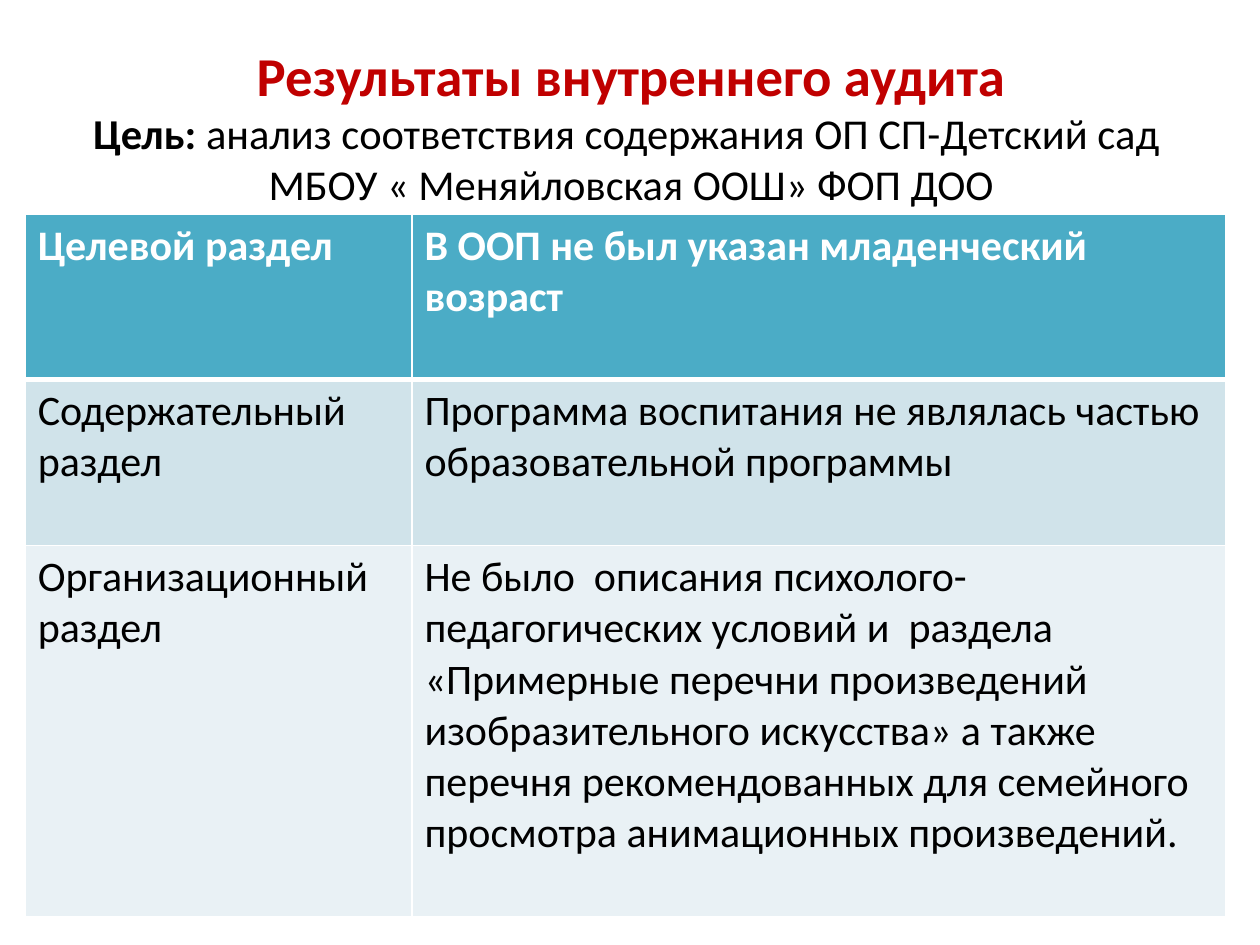
from lxml.etree import SubElement
from pptx import Presentation
from pptx.dml.color import RGBColor
from pptx.enum.text import MSO_ANCHOR, PP_ALIGN
from pptx.oxml.ns import qn
from pptx.util import Inches, Pt

FONT = "Calibri"
WHITE = "FFFFFF"
BLACK = "000000"
COLUMNS = [3.07, 6.46]
HEIGHTS = [1.31, 1.32, 2.95]
FILLS = ["4BACC6", "D0E3EA", "E9F1F5"]
SECTIONS = [
    ("Целевой раздел", "В ООП не был указан младенческий возраст"),
    ("Содержательный раздел",
     "Программа воспитания не являлась частью образовательной программы"),
    ("Организационный раздел",
     "Не было  описания психолого-педагогических условий и  раздела "
     "«Примерные перечни произведений изобразительного искусства» а также "
     "перечня рекомендованных для семейного просмотра анимационных произведений."),
]


def color(value):
    return RGBColor.from_string(value)


def add_span(para, text, size, tint, bold=False):
    span = para.add_run()
    span.text = text
    span.font.name = FONT
    span.font.size = Pt(size)
    span.font.bold = bold
    span.font.color.rgb = color(tint)


def add_heading(page, left, top, width, height):
    box = page.shapes.add_textbox(Inches(left), Inches(top), Inches(width), Inches(height))
    frame = box.text_frame
    frame.word_wrap = True
    frame.vertical_anchor = MSO_ANCHOR.TOP
    frame.margin_top = Inches(0.12)
    frame.margin_left = frame.margin_right = Inches(0.05)
    title = frame.paragraphs[0]
    goal = frame.add_paragraph()
    title.alignment = goal.alignment = PP_ALIGN.CENTER
    add_span(title, "Результаты внутреннего аудита", 31.3, "C00000", True)
    add_span(goal, "Цель: ", 24.3, BLACK, True)
    add_span(goal, "анализ соответствия содержания ОП СП-Детский сад  "
                   "МБОУ « Меняйловская ООШ» ФОП ДОО", 24.3, BLACK)


def set_borders(cell, widths):
    properties = cell._tc.get_or_add_tcPr()
    for index, (side, points) in enumerate(widths.items()):
        line = SubElement(properties, qn(f"a:{side}"), w=str(Pt(points)))
        fill = SubElement(line, qn("a:solidFill"))
        SubElement(fill, qn("a:srgbClr"), val=WHITE)
        properties.insert(index, line)


def add_audit_table(page, left, top, width, height):
    table = page.shapes.add_table(
        len(SECTIONS), len(COLUMNS),
        Inches(left), Inches(top), Inches(width), Inches(height)).table
    for column, share in zip(table.columns, COLUMNS):
        column.width = Inches(width * share / sum(COLUMNS))
    for number, texts in enumerate(SECTIONS):
        table.rows[number].height = Inches(height * HEIGHTS[number] / sum(HEIGHTS))
        header = number == 0
        for position, text in enumerate(texts):
            cell = table.cell(number, position)
            cell.fill.solid()
            cell.fill.fore_color.rgb = color(FILLS[number])
            set_borders(cell, {"lnL": 1, "lnR": 1,
                               "lnT": 3 if number == 1 else 1,
                               "lnB": 3 if header else 1})
            add_span(cell.text_frame.paragraphs[0], text, 24,
                     WHITE if header else BLACK, header)


def main():
    deck = Presentation()
    deck.slide_width = Inches(10)
    deck.slide_height = Inches(7.5)
    page = deck.slides.add_slide(deck.slide_layouts[6])
    page.background.fill.solid()
    page.background.fill.fore_color.rgb = color(WHITE)
    add_heading(page, 0.51, 0.21, 9, 1.42)
    add_audit_table(page, 0.2, 1.7, sum(COLUMNS), sum(HEIGHTS))
    deck.save("out.pptx")


if __name__ == "__main__":
    main()
